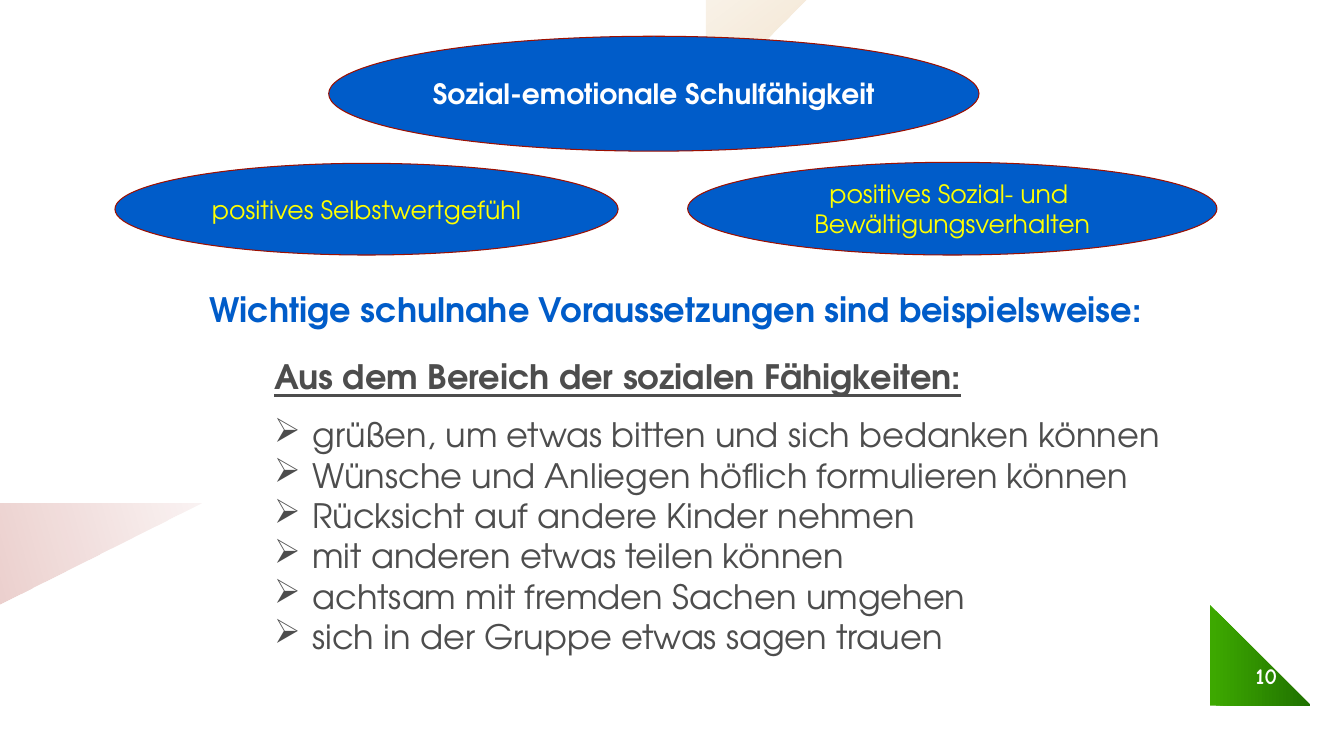
from pptx import Presentation
from pptx.dml.color import RGBColor
from pptx.enum.shapes import MSO_SHAPE as Shape
from pptx.enum.text import MSO_ANCHOR as Anchor, MSO_AUTO_SIZE as AutoSize, PP_ALIGN as Align
from pptx.oxml.ns import qn
from pptx.util import Inches, Pt
from lxml.etree import SubElement

WIDTH, HEIGHT = 13.33, 7.5
FONT, NUMBER_FONT = "TeX Gyre Adventor", "Comic Neue"
COLORS = {"blue": "005CC9", "red": "9D0F00", "yellow": "FFFF00", "white": "FFFFFF",
          "gray": "4D4D4D", "green": "3DA800", "dark_green": "1F7100", "ochre": "C07400"}

SKILLS = ["grüßen, um etwas bitten und sich bedanken können",
          "Wünsche und Anliegen höflich formulieren können",
          "Rücksicht auf andere Kinder nehmen",
          "mit anderen etwas teilen können",
          "achtsam mit fremden Sachen umgehen",
          "sich in der Gruppe etwas sagen trauen"]


def color(name):
    return RGBColor.from_string(COLORS[name])


def place(shape, box):
    shape.left, shape.top, shape.width, shape.height = (Inches(value) for value in box)


def write(paragraph, text, size=24, fill="gray", bold=False, underline=False,
          align=Align.LEFT, font=FONT):
    paragraph.alignment = align
    run = paragraph.add_run()
    run.text = text
    run.font.name, run.font.size = font, Pt(size)
    run.font.bold, run.font.underline = bold, underline
    run.font.color.rgb = color(fill)


def write_lines(frame, lines, **style):
    for index, line in enumerate(lines):
        paragraph = frame.add_paragraph() if index else frame.paragraphs[0]
        write(paragraph, line, **style)


def curve(start, control_1, control_2, end, steps=12):
    """Points along a cubic curve, both ends included."""
    points = []
    for step in range(steps + 1):
        t = step / steps
        weights = ((1 - t) ** 3, 3 * t * (1 - t) ** 2, 3 * t * t * (1 - t), t ** 3)
        knots = (start, control_1, control_2, end)
        points.append(tuple(sum(w * knot[axis] for w, knot in zip(weights, knots))
                            for axis in (0, 1)))
    return points


def add_ribbon(slide, points, stops, angle=0):
    """Outline with a gradient; each stop is position, colour, opacity (percent)."""
    builder = slide.shapes.build_freeform(*points[0], scale=Inches(1))
    builder.add_line_segments(points[1:], close=True)
    shape = builder.convert_to_shape()
    shape.shadow.inherit = False
    shape.line.fill.background()
    shape.fill.gradient()
    shape.fill.gradient_angle = 360 - angle
    for stop, (position, name, _) in zip(shape.fill.gradient_stops, stops):
        stop.position = position / 100
        stop.color.rgb = color(name)
    for element, (_, _, opacity) in zip(shape._element.iter(qn("a:srgbClr")), stops):
        if opacity < 100:
            SubElement(element, qn("a:alpha"), val=str(opacity * 1000))


def add_decoration(slide):
    # Green corner with its pale underside
    underside = (curve((12.02, 7.13), (12.02, 7.13), (12.78, 7.18), (WIDTH, 7.35))
                 + curve((WIDTH, 6.68), (12.72, 6.51), (12.24, 6.52), (12.24, 6.52)))
    add_ribbon(slide, underside, [(3, "green", 6), (100, "green", 50)])
    add_ribbon(slide, [(WIDTH, 6.62), (12.22, 6.22), (12, 6.83), (WIDTH, 7.31)],
               [(3, "green", 100), (100, "dark_green", 100)])
    # Pale ribbons at the top and left edges
    add_ribbon(slide, [(7.79, 0), (7.31, 0), (6.85, 0.53), (6.5, 1.23), (7.16, 0.74)],
               [(0, "ochre", 5), (100, "ochre", 20)], angle=53)
    add_ribbon(slide, [(2.24, 5.05), (1.42, 5.05), (0, 5.36), (0, 5.73), (1.53, 5.41)],
               [(0, "red", 5), (100, "red", 20)], angle=164)


def add_ellipse(slide, box, lines, **style):
    shape = slide.shapes.add_shape(Shape.OVAL, *(Inches(value) for value in box))
    shape.shadow.inherit = False
    shape.fill.solid()
    shape.fill.fore_color.rgb = color("blue")
    shape.line.color.rgb = color("red")
    shape.line.width = Pt(0.75)
    frame = shape.text_frame
    frame.word_wrap = False
    frame.vertical_anchor = Anchor.MIDDLE
    write_lines(frame, lines, align=Align.CENTER, **style)


def add_overview(slide):
    add_ellipse(slide, (3.26, 0.36, 6.45, 1.14), ["Sozial-emotionale Schulfähigkeit"],
                size=20, fill="white", bold=True)
    branches = [((1.14, 1.62, 4.99, 0.91), ["positives Selbstwertgefühl"]),
                ((6.82, 1.61, 5.25, 0.92), ["positives Sozial- und ", "Bewältigungsverhalten"])]
    for box, lines in branches:
        add_ellipse(slide, box, lines, size=18, fill="yellow")


def add_title(slide, box):
    title = slide.shapes.title
    place(title, box)
    frame = title.text_frame
    frame.word_wrap = True
    frame.auto_size = AutoSize.NONE
    frame.vertical_anchor = Anchor.TOP
    write(frame.paragraphs[0], "Wichtige schulnahe Voraussetzungen sind beispielsweise:",
          fill="blue", bold=True, align=Align.CENTER)


def add_skills(slide, box):
    frame = slide.shapes.add_textbox(*(Inches(value) for value in box)).text_frame
    frame.word_wrap = False
    heading = frame.paragraphs[0]
    heading.line_spacing = 1.1
    heading.space_after = Pt(13)
    write(heading, "Aus dem Bereich der sozialen Fähigkeiten:", bold=True, underline=True)
    for skill in SKILLS:
        paragraph = frame.add_paragraph()
        properties = paragraph._p.get_or_add_pPr()
        properties.set("marL", str(Inches(0.38)))
        properties.set("indent", str(-Inches(0.38)))
        SubElement(properties, qn("a:buChar"), char="➢")
        write(paragraph, skill)


def add_slide_number(slide, box):
    frame = slide.shapes.add_textbox(*(Inches(value) for value in box)).text_frame
    frame.word_wrap = True
    frame.vertical_anchor = Anchor.MIDDLE
    write(frame.paragraphs[0], "10", size=16, fill="white", bold=True,
          align=Align.CENTER, font=NUMBER_FONT)


def main():
    presentation = Presentation()
    presentation.slide_width, presentation.slide_height = Inches(WIDTH), Inches(HEIGHT)
    slide = presentation.slides.add_slide(presentation.slide_layouts.get_by_name("Title Only"))
    add_decoration(slide)
    add_slide_number(slide, (12.21, 6.5, 0.7, 0.4))
    add_overview(slide)
    add_title(slide, (1.77, 2.82, 9.86, 0.5))
    add_skills(slide, (2.62, 3.44, 9.45, 4.06))
    presentation.save("out.pptx")


if __name__ == "__main__":
    main()
